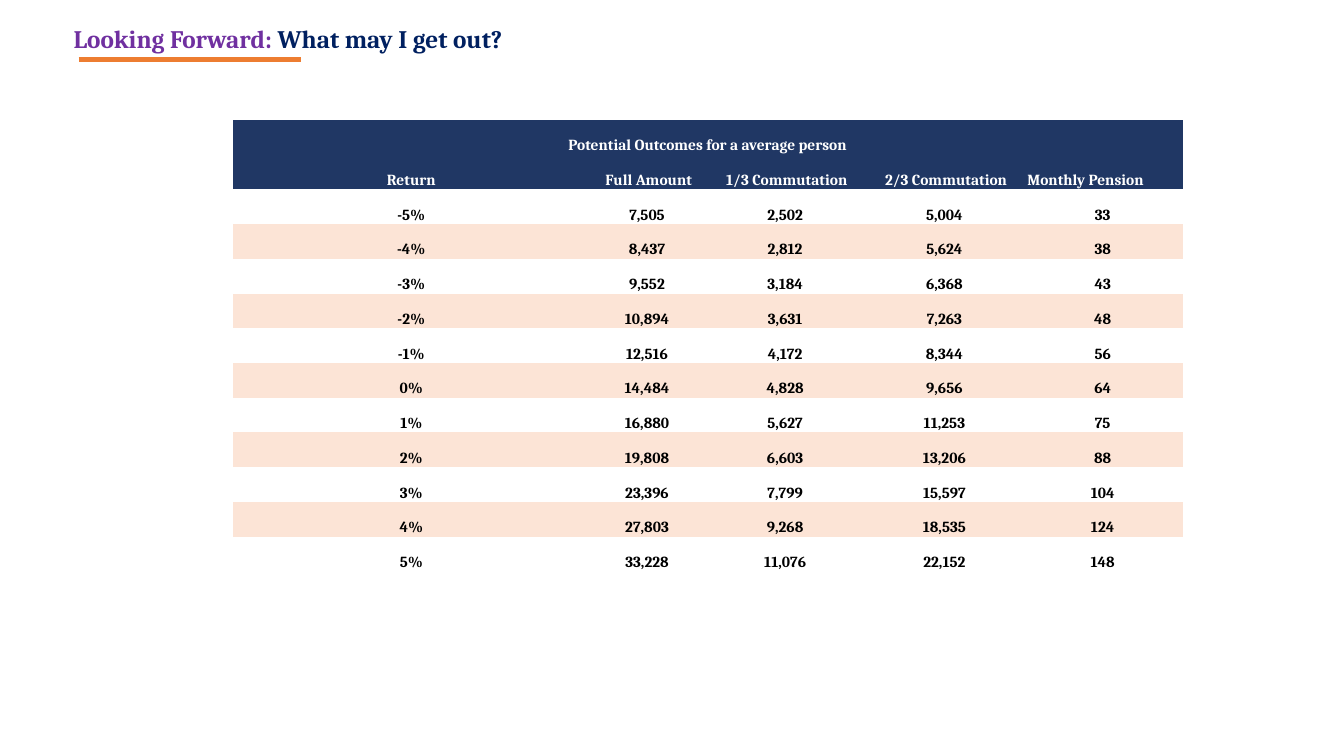
from dataclasses import dataclass

from lxml.etree import SubElement
from pptx import Presentation
from pptx.dml.color import RGBColor
from pptx.enum.shapes import MSO_CONNECTOR
from pptx.enum.text import MSO_ANCHOR, MSO_AUTO_SIZE, PP_ALIGN
from pptx.oxml.ns import qn
from pptx.slide import Slide
from pptx.table import Table
from pptx.util import Inches, Pt

PURPLE = RGBColor(0x70, 0x30, 0xA0)
NAVY = RGBColor(0x00, 0x20, 0x60)
ORANGE = RGBColor(0xED, 0x7D, 0x31)
HEADER_BLUE = RGBColor(0x20, 0x37, 0x64)
PEACH = RGBColor(0xFC, 0xE4, 0xD6)
WHITE = RGBColor(0xFF, 0xFF, 0xFF)
BLACK = RGBColor(0x00, 0x00, 0x00)

NO_GRID_STYLE = "{2D5ABB26-0587-4C30-8999-92F81FD0307C}"
TITLE_FONT = {"name": "Cambria", "size": Pt(18), "bold": True}
TABLE_FONT = {"name": "Cambria", "size": Pt(11), "bold": True}
CELL_FORMAT = {
    "vertical_anchor": MSO_ANCHOR.BOTTOM,
    "margin_left": Inches(0.01),
    "margin_right": Inches(0.01),
    "margin_top": Inches(0.01),
    "margin_bottom": 0,
}


@dataclass(frozen=True)
class Outcome:
    rate: int
    full_amount: int
    one_third: int
    two_thirds: int
    pension: int

    def labels(self) -> list[str]:
        amounts = (self.full_amount, self.one_third, self.two_thirds, self.pension)
        return [f"{self.rate}%"] + [f"{amount:,} " for amount in amounts]


CAPTION = "Potential Outcomes for a average person"
HEADINGS = ["Return", "Full Amount", "1/3 Commutation", "2/3 Commutation", "Monthly Pension"]
COLUMN_WIDTHS = [3.54, 1.17, 1.57, 1.59, 1.55]
OUTCOMES = [
    Outcome(-5, 7505, 2502, 5004, 33),
    Outcome(-4, 8437, 2812, 5624, 38),
    Outcome(-3, 9552, 3184, 6368, 43),
    Outcome(-2, 10894, 3631, 7263, 48),
    Outcome(-1, 12516, 4172, 8344, 56),
    Outcome(0, 14484, 4828, 9656, 64),
    Outcome(1, 16880, 5627, 11253, 75),
    Outcome(2, 19808, 6603, 13206, 88),
    Outcome(3, 23396, 7799, 15597, 104),
    Outcome(4, 27803, 9268, 18535, 124),
    Outcome(5, 33228, 11076, 22152, 148),
]


def apply_format(target: object, values: dict) -> None:
    for attribute, value in values.items():
        setattr(target, attribute, value)


def write_heading(slide: Slide) -> None:
    heading = slide.shapes.title
    apply_format(heading, {
        "left": Inches(0.63), "top": Inches(0.18),
        "width": Inches(5.97), "height": Inches(0.4),
    })
    apply_format(heading.text_frame, {
        "word_wrap": True,
        "auto_size": MSO_AUTO_SIZE.SHAPE_TO_FIT_TEXT,
        "vertical_anchor": MSO_ANCHOR.TOP,
    })
    line = heading.text_frame.paragraphs[0]
    line.alignment = PP_ALIGN.LEFT
    for words, color in (("Looking Forward: ", PURPLE), ("What may I get out?", NAVY)):
        phrase = line.add_run()
        phrase.text = words
        apply_format(phrase.font, TITLE_FONT)
        phrase.font.color.rgb = color


def draw_underline(slide: Slide) -> None:
    underline = slide.shapes.add_connector(
        MSO_CONNECTOR.STRAIGHT, Inches(0.78), Inches(0.59), Inches(2.99), Inches(0.59)
    )
    underline.line.color.rgb = ORANGE
    underline.line.width = Pt(3)
    SubElement(underline._element.spPr, qn("a:effectLst"))


def fill_row(table: Table, row: int, labels: list[str], fill: RGBColor, ink: RGBColor) -> None:
    for column, label in enumerate(labels):
        cell = table.cell(row, column)
        apply_format(cell, CELL_FORMAT)
        cell.fill.solid()
        cell.fill.fore_color.rgb = fill
        entry = cell.text_frame.paragraphs[0]
        entry.alignment = PP_ALIGN.CENTER
        if label:
            words = entry.add_run()
            words.text = label
            apply_format(words.font, TABLE_FONT)
            words.font.color.rgb = ink


def draw_outcomes(slide: Slide) -> None:
    table = slide.shapes.add_table(
        len(OUTCOMES) + 2, len(HEADINGS),
        Inches(2.31), Inches(1.19), Inches(sum(COLUMN_WIDTHS)), Inches(4.48),
    ).table
    apply_format(table, {"first_row": False, "horz_banding": False})
    table._tbl.tblPr.find(qn("a:tableStyleId")).text = NO_GRID_STYLE
    for column, width in zip(table.columns, COLUMN_WIDTHS):
        column.width = Inches(width)

    caption_row = [CAPTION] + [""] * (len(HEADINGS) - 1)
    fill_row(table, 0, caption_row, HEADER_BLUE, WHITE)
    table.cell(0, 0).merge(table.cell(0, len(HEADINGS) - 1))
    fill_row(table, 1, HEADINGS, HEADER_BLUE, WHITE)
    pension_heading = table.cell(1, len(HEADINGS) - 1)
    pension_heading.text_frame.paragraphs[0].alignment = PP_ALIGN.LEFT
    for index, outcome in enumerate(OUTCOMES):
        band = PEACH if index % 2 else WHITE
        fill_row(table, index + 2, outcome.labels(), band, BLACK)


def main() -> None:
    presentation = Presentation()
    presentation.slide_width = Inches(13.33)
    presentation.slide_height = Inches(7.5)
    slide = presentation.slides.add_slide(presentation.slide_layouts.get_by_name("Title Only"))
    write_heading(slide)
    draw_underline(slide)
    draw_outcomes(slide)
    presentation.save("out.pptx")


if __name__ == "__main__":
    main()
